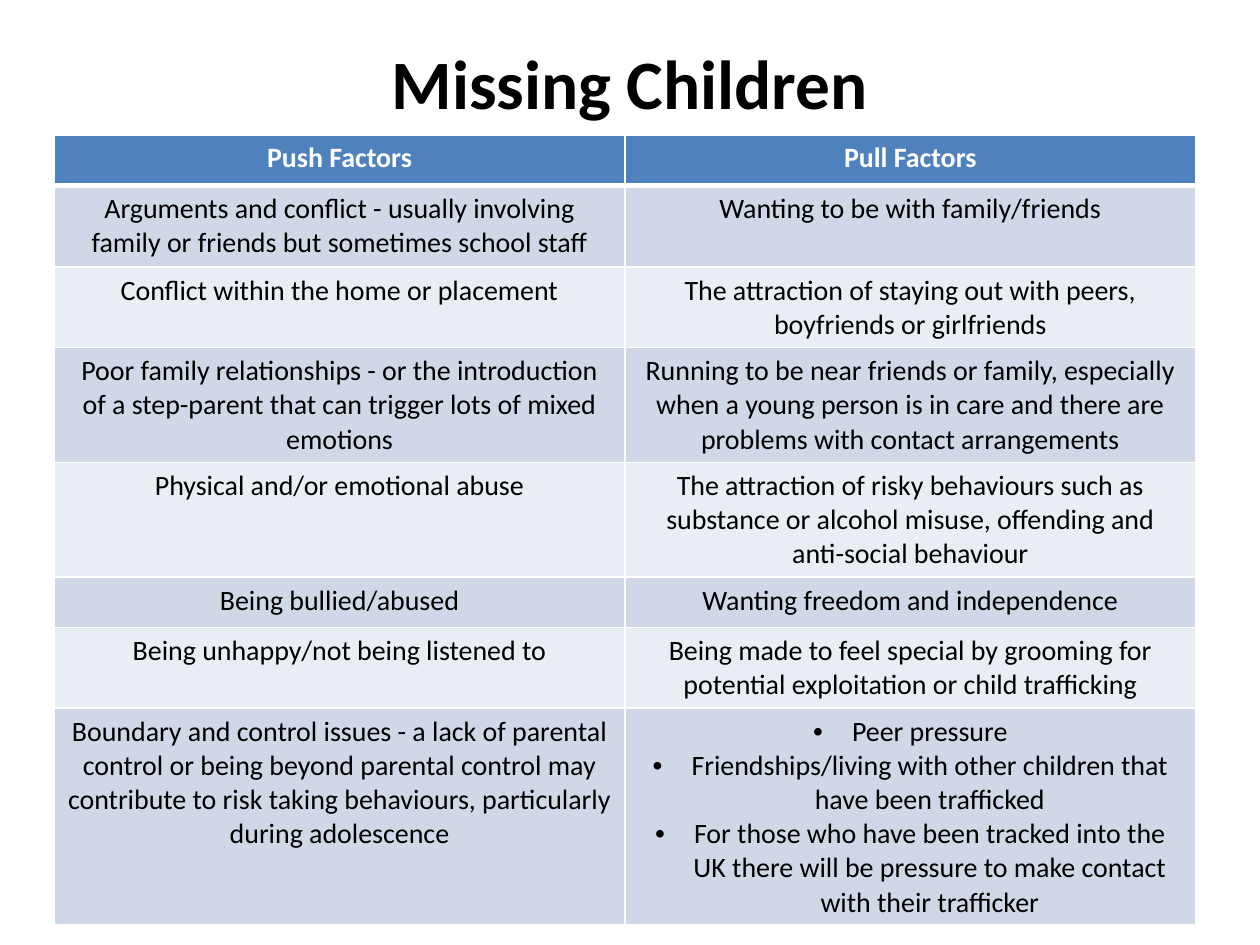
from lxml.etree import SubElement
from pptx import Presentation
from pptx.dml.color import RGBColor
from pptx.enum.text import MSO_ANCHOR, PP_ALIGN
from pptx.oxml.ns import qn
from pptx.util import Inches, Pt

BLACK = RGBColor(0x00, 0x00, 0x00)
WHITE = RGBColor(0xFF, 0xFF, 0xFF)
HEADER_BLUE = RGBColor(0x4F, 0x81, 0xBD)
BAND_DARK = RGBColor(0xD0, 0xD8, 0xE8)
BAND_LIGHT = RGBColor(0xE9, 0xED, 0xF4)

HEADINGS = ("Push Factors", "Pull Factors")
# Each row: height in inches, push factor, pull factor (a list is bulleted)
FACTORS = [
    (0.65, "Arguments and conflict - usually involving family or friends "
           "but sometimes school staff",
     "Wanting to be with family/friends"),
    (0.64, "Conflict within the home or placement",
     "The attraction of staying out with peers, boyfriends or girlfriends"),
    (0.91, "Poor family relationships - or the introduction of a step-parent "
           "that can trigger lots of mixed emotions",
     "Running to be near friends or family, especially when a young person "
     "is in care and there are problems with contact arrangements"),
    (0.91, "Physical and/or emotional abuse",
     "The attraction of risky behaviours such as substance or alcohol misuse, "
     "offending and anti-social behaviour"),
    (0.4, "Being bullied/abused", "Wanting freedom and independence"),
    (0.64, "Being unhappy/not being listened to",
     "Being made to feel special by grooming for potential exploitation "
     "or child trafficking"),
    (1.72, "Boundary and control issues - a lack of parental control or being "
           "beyond parental control may contribute to risk taking behaviours, "
           "particularly during adolescence",
     ["Peer pressure",
      "Friendships/living with other children that have been trafficked",
      "For those who have been tracked into the UK there will be pressure "
      "to make contact with their trafficker"]),
]


class SlideBuilder:
    font = "Calibri"
    title_size = Pt(39.6)
    table_size = Pt(16)
    bullet_indent = Inches(0.31)

    def __init__(self, page):
        self.page = page

    def add_span(self, para, text, size, color, bold=False):
        para.alignment = PP_ALIGN.CENTER
        span = para.add_run()
        span.text = text
        span.font.name = self.font
        span.font.size = size
        span.font.bold = bold
        span.font.color.rgb = color

    def title(self, text, left, top, width, height):
        box = self.page.shapes.add_textbox(
            Inches(left), Inches(top), Inches(width), Inches(height))
        frame = box.text_frame
        frame.word_wrap = True
        frame.vertical_anchor = MSO_ANCHOR.MIDDLE
        self.add_span(frame.paragraphs[0], text, self.title_size, BLACK, bold=True)

    def bullet(self, para):
        properties = para._p.get_or_add_pPr()
        properties.set("marL", str(self.bullet_indent))
        properties.set("indent", str(-self.bullet_indent))
        SubElement(properties, qn("a:buFont"), typeface="Arial")
        SubElement(properties, qn("a:buChar"), char="•")

    def borders(self, cell, top=1, bottom=1):
        """Draw white cell edges; the widths are in points."""
        properties = cell._tc.get_or_add_tcPr()
        for side, points in (("L", 1), ("R", 1), ("T", top), ("B", bottom)):
            line = SubElement(properties, qn(f"a:ln{side}"), w=str(Pt(points)))
            fill = SubElement(line, qn("a:solidFill"))
            SubElement(fill, qn("a:srgbClr"), val=str(WHITE))

    def cell(self, cell, content, fill, color, bold=False, top=1, bottom=1):
        self.borders(cell, top, bottom)
        cell.fill.solid()
        cell.fill.fore_color.rgb = fill
        bulleted = isinstance(content, list)
        frame = cell.text_frame
        for index, text in enumerate(content if bulleted else [content]):
            para = frame.add_paragraph() if index else frame.paragraphs[0]
            if bulleted:
                self.bullet(para)
            self.add_span(para, text, self.table_size, color, bold)

    def table(self, headings, rows, left, top, width, header_height):
        heights = [header_height] + [height for height, *_ in rows]
        table = self.page.shapes.add_table(
            len(heights), len(headings), Inches(left), Inches(top),
            Inches(width), Inches(sum(heights))).table
        for row, height in zip(table.rows, heights):
            row.height = Inches(height)
        for column, heading in enumerate(headings):
            self.cell(table.cell(0, column), heading, HEADER_BLUE, WHITE,
                      bold=True, bottom=3)
        for number, (_, *contents) in enumerate(rows, start=1):
            band = BAND_DARK if number % 2 else BAND_LIGHT
            for column, content in enumerate(contents):
                self.cell(table.cell(number, column), content, band, BLACK,
                          top=3 if number == 1 else 1)


def main():
    deck = Presentation()
    deck.slide_width = Inches(10)
    deck.slide_height = Inches(7.5)
    builder = SlideBuilder(deck.slides.add_slide(deck.slide_layouts[6]))
    builder.title("Missing Children", 0.5, 0.3, 9, 0.69)
    builder.table(HEADINGS, FACTORS, 0.43, 1.07, 9.06, header_height=0.4)
    deck.save("out.pptx")


if __name__ == "__main__":
    main()
